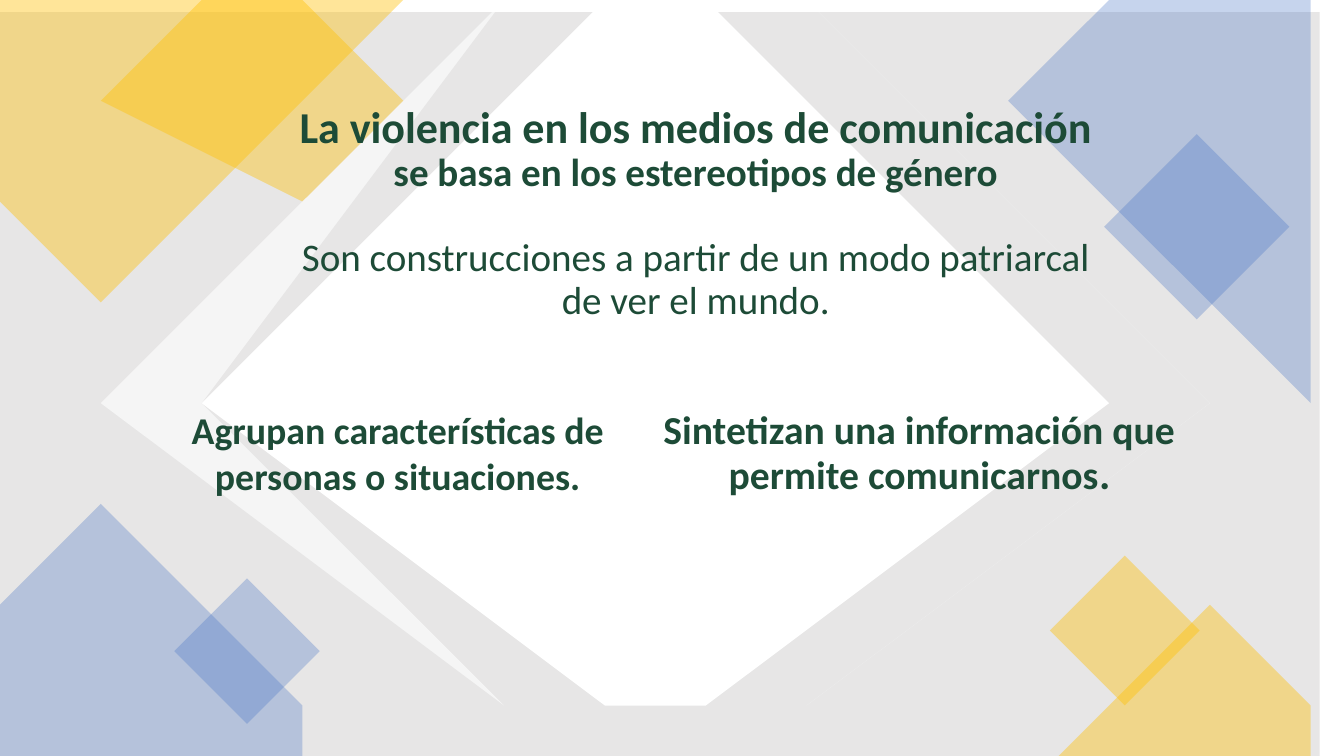
"""Builds the slide on gender stereotypes in media violence."""
from lxml import etree
from pptx import Presentation
from pptx.dml.color import RGBColor
from pptx.enum import shapes, text
from pptx.oxml import ns
from pptx.util import Inches, Pt

GREEN = RGBColor(0x1D, 0x4B, 0x37)
GREY = RGBColor(0xE7, 0xE6, 0xE6)
WHITE = RGBColor(0xFF, 0xFF, 0xFF)
YELLOW = RGBColor(0xFF, 0xC0, 0x00)
BLUE = RGBColor(0x44, 0x72, 0xC4)


def paint(shape, color, opacity=100):
    shape.shadow.inherit = False
    shape.line.fill.background()
    shape.fill.solid()
    shape.fill.fore_color.rgb = color
    if opacity < 100:
        rgb = shape.fill._xPr.find(".//" + ns.qn("a:srgbClr"))
        etree.SubElement(rgb, ns.qn("a:alpha"), val=str(opacity * 1000))


def style(paragraph, size, bold=True, spacing=0.9):
    paragraph.alignment = text.PP_ALIGN.CENTER
    paragraph.line_spacing = spacing
    for run in paragraph.runs:
        run.font.name = "Calibri"
        run.font.size = Pt(size)
        run.font.bold = bold
        run.font.color.rgb = GREEN


deck = Presentation()
deck.slide_width, deck.slide_height = Inches(13.33), Inches(7.5)
slide = deck.slides.add_slide(deck.slide_layouts[5])
canvas = slide.shapes

backdrop = canvas.add_shape(shapes.MSO_SHAPE.RECTANGLE, Inches(-0.24), Inches(0.12),
                            Inches(13.33), Inches(7.5))
paint(backdrop, GREY)

corners_and_center = [
    (YELLOW, 40, [[(0, 0), (3.75, 0), (0.96, 2.79), (0, 1.83)]]),
    (YELLOW, 40, [[(1.87, 0), (3.35, 0), (3.88, 0.52), (2.61, 1.79), (1.35, 0.52)]]),
    (BLUE, 30, [[(11, 0), (13.33, 0), (13.33, 3.94), (10.19, 0.8)]]),
    (BLUE, 30, [[(1.27, 5.12), (3.16, 7.01), (2.67, 7.5), (0, 7.5), (0, 6.39)]]),
    (YELLOW, 40, [[(11.88, 5.52), (13.33, 6.98), (13.33, 7.5), (9.9, 7.5)]]),
    (WHITE, 100, [[(6.25, 0), (7.08, 0), (10.83, 3.75), (7.09, 7.49), (6.24, 7.49),
                   (2.5, 3.75)]]),
    (WHITE, 60, [[(8.04, 0), (8.17, 0), (11.92, 3.75), (8.18, 7.49), (8.05, 7.49),
                  (11.79, 3.75)],
                 [(5.16, 0), (5.29, 0), (1.54, 3.75), (5.28, 7.49), (5.16, 7.49),
                  (1.41, 3.75)]]),
]
for color, opacity, outlines in corners_and_center:
    builder = canvas.build_freeform(*outlines[0][0], scale=Inches(1))
    for number, outline in enumerate(outlines):
        if number:
            builder.move_to(*outline[0])
        builder.add_line_segments(outline[1:], close=True)
    paint(builder.convert_to_shape(), color, opacity)

for left, top, side, color, opacity in [(11.22, 1.6, 1.3, BLUE, 30),
                                        (1.94, 5.95, 1.02, BLUE, 30),
                                        (10.63, 5.73, 1.05, YELLOW, 40)]:
    accent = canvas.add_shape(shapes.MSO_SHAPE.RECTANGLE, Inches(left), Inches(top),
                              Inches(side), Inches(side))
    accent.rotation = 45
    paint(accent, color, opacity)

heading = canvas.title
canvas._spTree.append(heading._element)
heading.left, heading.top = Inches(1.89), Inches(-0.12)
heading.width, heading.height = Inches(10.02), Inches(3.49)
message = heading.text_frame
message.auto_size = text.MSO_AUTO_SIZE.NONE
message.vertical_anchor = text.MSO_ANCHOR.BOTTOM
message.margin_bottom = Inches(0.17)
message.text = "\n".join(["La violencia en los medios de comunicación",
                          "se basa en los estereotipos de género",
                          "Son construcciones a partir de un modo patriarcal",
                          "de ver el mundo."])
for paragraph, size, bold in zip(message.paragraphs, (31.5, 27.9, 27.9, 27.9),
                                 (True, True, False, False)):
    style(paragraph, size, bold)
    paragraph.space_before = Pt(0)
message.paragraphs[2].space_before = Pt(30.6)

for left, top, width, height, inset, size, spacing, pieces in [
        (1.71, 3.99, 4.47, 1.25, 0.05, 27, 1.0,
         ["Agrupan características de personas o situaciones."]),
        (6.43, 3.97, 5.38, 1.09, 0.1, 28.3, 0.9,
         ["Sintetizan una información que permite comunicarnos", "."])]:
    trait = canvas.add_textbox(Inches(left), Inches(top), Inches(width), Inches(height))
    frame = trait.text_frame
    frame.word_wrap = True
    frame.margin_top = frame.margin_bottom = Inches(inset)
    statement = frame.paragraphs[0]
    for piece in pieces:
        statement.add_run().text = piece
    style(statement, size, spacing=spacing)
    for stop in statement.runs[1:]:
        stop.font.size = Pt(30.3)

deck.save("out.pptx")
